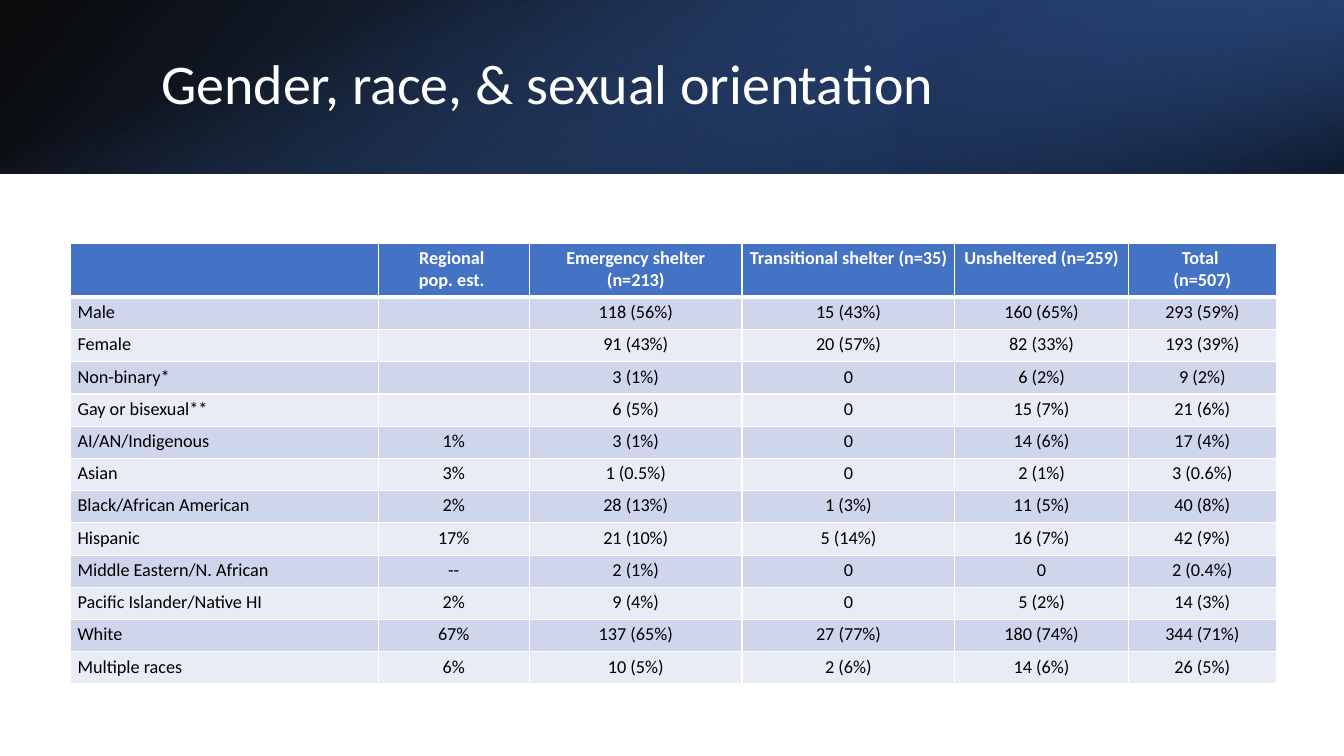
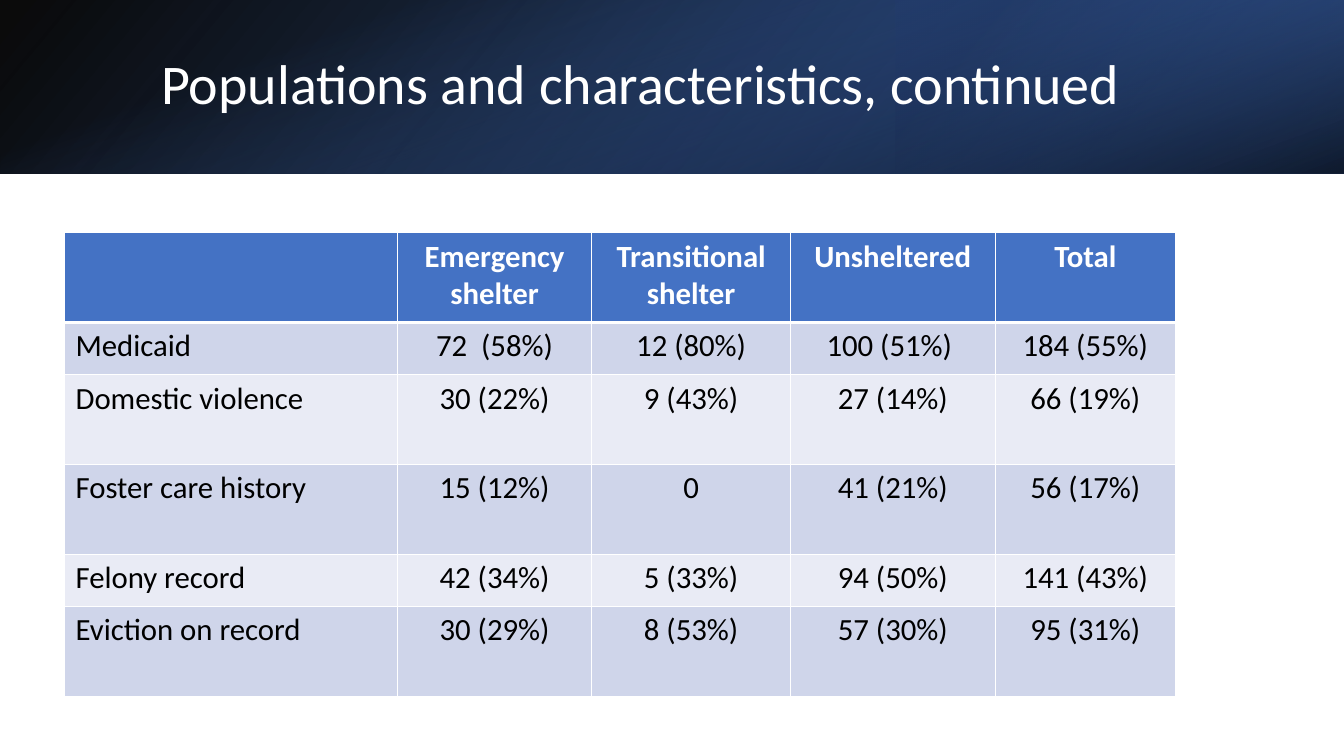
from lxml.etree import SubElement
from pptx import Presentation
from pptx.dml.color import RGBColor
from pptx.enum.shapes import MSO_SHAPE as Shape
from pptx.enum.text import MSO_ANCHOR as Anchor, PP_ALIGN as Align
from pptx.oxml.ns import qn
from pptx.util import Inches, Pt

WIDTH, HEIGHT = 13.33, 7.5
BAND_HEIGHT = 1.72


def color(value):
    return RGBColor.from_string(value)


class Deck:
    font = "Calibri"
    white, black = "FFFFFF", "000000"
    blue, navy, deep_blue = "4472C4", "203864", "2F5597"
    row_fills = ("CFD5EA", "E9EBF5")

    def __init__(self):
        self.presentation = Presentation()
        self.presentation.slide_width = Inches(WIDTH)
        self.presentation.slide_height = Inches(HEIGHT)
        self.slide = None

    def add_slide(self, title):
        layout = self.presentation.slide_layouts[6]
        self.slide = self.presentation.slides.add_slide(layout)
        self.band()
        self.title(title)

    def band(self):
        # Three gradient layers, the last one a strip turned on its side
        self.gradient((0, 0, WIDTH, BAND_HEIGHT), 140,
                      ((0, self.black, 96), (100, self.deep_blue, 100)), flip=True)
        third = WIDTH / 3
        self.gradient((WIDTH - third, 0, third, BAND_HEIGHT), 320,
                      ((19, self.navy, 68), (100, self.blue, 79)), rotation=180, flip=True)
        offset = (WIDTH - BAND_HEIGHT) / 2
        self.gradient((offset, -offset, BAND_HEIGHT, WIDTH), 340,
                      ((23, self.blue, 0), (99, self.black, 74)), rotation=90)

    def gradient(self, box, angle, stops, rotation=0, flip=False):
        """Stops are (position, colour, opacity), both numbers in percent."""
        shape = self.slide.shapes.add_shape(Shape.RECTANGLE, *map(Inches, box))
        shape.shadow.inherit = False
        shape.line.fill.background()
        shape.rotation = rotation
        if flip:
            shape._element.spPr.find(qn("a:xfrm")).set("flipH", "1")
        shape.fill.gradient()
        shape.fill.gradient_angle = 360 - angle
        for stop, (position, value, _) in zip(shape.fill.gradient_stops, stops):
            stop.position = position / 100
            stop.color.rgb = color(value)
        elements = shape._element.spPr.iter(qn("a:srgbClr"))
        for element, (_, _, opacity) in zip(elements, stops):
            SubElement(element, qn("a:alpha"), val=str(opacity * 1000))

    def title(self, text):
        box = self.slide.shapes.add_textbox(*map(Inches, (1.5, 0.38, 10.98, 0.96)))
        text_frame = box.text_frame
        text_frame.word_wrap = True
        text_frame.vertical_anchor = Anchor.MIDDLE
        text_frame.text = text
        text_frame.paragraphs[0].line_spacing = 0.9
        self.format_runs(text_frame, 40, self.white)

    def format_runs(self, text_frame, size, value, bold=False):
        for paragraph in text_frame.paragraphs:
            for run in paragraph.runs:
                run.font.name = self.font
                run.font.size = Pt(size)
                run.font.bold = bold
                run.font.color.rgb = color(value)

    def table(self, left, top, widths, heights, rows, size, margins):
        box = (left, top, sum(widths), sum(heights))
        frame = self.slide.shapes.add_table(len(rows), len(widths), *map(Inches, box))
        table = frame.table
        table.horz_banding = False
        for column, width in zip(table.columns, widths):
            column.width = Inches(width)
        for row, height in zip(table.rows, heights):
            row.height = Inches(height)
        for row_index, row in enumerate(rows):
            for column_index, text in enumerate(row):
                cell = table.cell(row_index, column_index)
                self.cell(cell, text, row_index, column_index, size, margins)

    def cell(self, cell, text, row_index, column_index, size, margins):
        header = row_index == 0
        side, vertical = map(Inches, margins)
        cell.margin_left = cell.margin_right = side
        cell.margin_top = cell.margin_bottom = vertical
        cell.text_frame.text = text
        for paragraph in cell.text_frame.paragraphs:
            paragraph.alignment = Align.CENTER if column_index else Align.LEFT
            if not text:
                # Keeps an empty cell from stretching its row
                SubElement(paragraph._p, qn("a:endParaRPr"), sz=str(size * 100))
        self.format_runs(cell.text_frame, size, self.white if header else self.black, header)
        # A thick rule separates the header from the body
        self.borders(cell, top=3 if row_index == 1 else 1, bottom=3 if header else 1)
        cell.fill.solid()
        cell.fill.fore_color.rgb = color(
            self.blue if header else self.row_fills[(row_index - 1) % 2])

    def borders(self, cell, top, bottom):
        properties = cell._tc.get_or_add_tcPr()
        for tag, width in (("lnL", 1), ("lnR", 1), ("lnT", top), ("lnB", bottom)):
            line = SubElement(properties, qn("a:" + tag), w=str(Pt(width)))
            fill = SubElement(line, qn("a:solidFill"))
            SubElement(fill, qn("a:srgbClr"), val=self.white)


DEMOGRAPHICS = [
    ("", "Regional \npop. est. ", "Emergency shelter (n=213)", "Transitional shelter (n=35)",
     "Unsheltered (n=259)", "Total \n(n=507)"),
    ("Male", "", "118 (56%)", "15 (43%)", "160 (65%)", "293 (59%)"),
    ("Female", "", "91 (43%)", "20 (57%)", "82 (33%)", "193 (39%)"),
    ("Non-binary*", "", "3 (1%)", "0", "6 (2%)", "9 (2%)"),
    ("Gay or bisexual**", "", "6 (5%)", "0", "15 (7%)", "21 (6%)"),
    ("AI/AN/Indigenous", "1%", "3 (1%)", "0", "14 (6%)", "17 (4%)"),
    ("Asian", "3%", "1 (0.5%)", "0", "2 (1%)", "3 (0.6%)"),
    ("Black/African American", "2%", "28 (13%)", "1 (3%)", "11 (5%)", "40 (8%)"),
    ("Hispanic", "17%", "21 (10%)", "5 (14%)", "16 (7%)", "42 (9%)"),
    ("Middle Eastern/N. African", "--", "2 (1%)", "0", "0", "2 (0.4%)"),
    ("Pacific Islander/Native HI", "2%", "9 (4%)", "0", "5 (2%)", "14 (3%)"),
    ("White", "67%", "137 (65%)", "27 (77%)", "180 (74%)", "344 (71%)"),
    ("Multiple races", "6%", "10 (5%)", "2 (6%)", "14 (6%)", "26 (5%)"),
]

CHARACTERISTICS = [
    ("", "Emergency shelter", "Transitional shelter", "Unsheltered", "Total"),
    ("Medicaid", "72  (58%)", "12 (80%)", "100 (51%) ", "184 (55%)"),
    ("Domestic violence", "30 (22%)", "9 (43%)", "27 (14%)", "66 (19%)"),
    ("Foster care history", "15 (12%)", "0", "41 (21%)", "56 (17%)"),
    ("Felony record", "42 (34%)", "5 (33%)", "94 (50%)", "141 (43%)"),
    ("Eviction on record", "30 (29%)", "8 (53%)", "57 (30%)", "95 (31%)"),
]


def main():
    deck = Deck()

    # Demographics
    deck.add_slide("Gender, race, & sexual orientation")
    deck.table(0.7, 2.41, (3.05, 1.5, 2.11, 2.11, 1.72, 1.47), [0.54] + [0.32] * 12,
               DEMOGRAPHICS, size=13, margins=(0.07, 0.04))

    # Characteristics
    deck.add_slide("Populations and characteristics, continued")
    tall, short = 0.89, 0.52
    deck.table(0.64, 2.31, (3.3, 1.93, 1.97, 2.03, 1.79),
               (tall, short, tall, tall, short, tall),
               CHARACTERISTICS, size=22, margins=(0.11, 0.05))

    deck.presentation.save("out.pptx")


if __name__ == "__main__":
    main()
